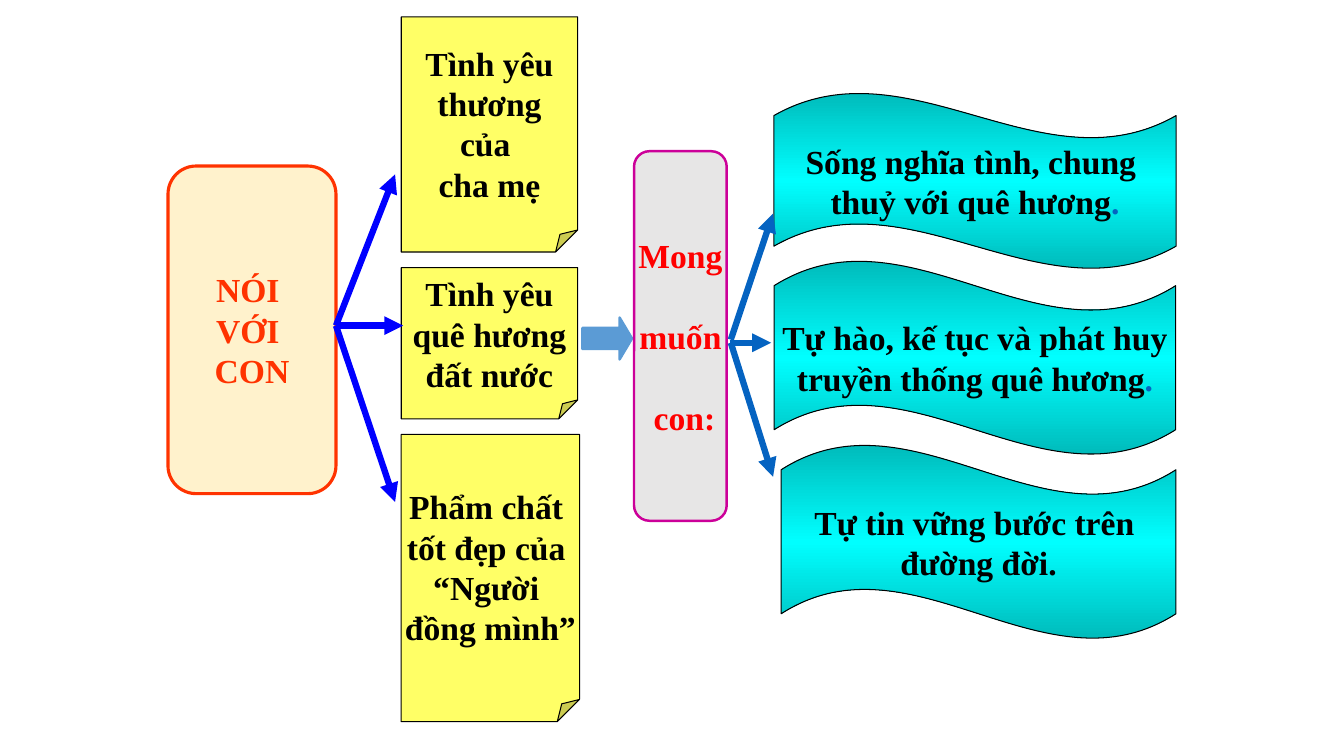
from copy import deepcopy
from dataclasses import dataclass

from lxml.etree import SubElement
from pptx import Presentation
from pptx.dml.color import RGBColor as Rgb
from pptx.enum.shapes import MSO_CONNECTOR as Connector, MSO_SHAPE as Preset
from pptx.enum.text import MSO_ANCHOR as Anchor, PP_ALIGN as Align
from pptx.oxml.ns import qn
from pptx.shapes.autoshape import Shape
from pptx.slide import Slide
from pptx.util import Pt


@dataclass(frozen=True)
class Theme:
    font: str = "Times New Roman"
    text_size: float = 24
    arrow_width: float = 4.5
    black: str = "000000"
    orange: str = "FF3300"
    cream: str = "FFF2CC"
    yellow: str = "FFFF66"
    red: str = "FF0000"
    magenta: str = "CC0099"
    grey: str = "E7E6E6"
    sky: str = "5B9BD5"
    blue: str = "0000FF"
    link_blue: str = "0563C1"
    wave_stops: tuple[str, ...] = ("00BBBB", "00FFFF", "00BBBB")


THEME = Theme()


@dataclass(frozen=True)
class Box:
    preset: Preset
    left: float
    top: float
    width: float
    height: float
    fills: tuple[str, ...]
    line: str
    line_width: float
    adjustments: tuple[float, ...]
    text: str = ""
    text_color: str = THEME.black
    line_gap: float = 0
    blue_stop: bool = False


@dataclass(frozen=True)
class Fan:
    """Arrows that leave one side of a box for several targets."""
    color: str
    arrows: tuple[tuple[float, float, float, float], ...]


def note(top: float, width: float, height: float, text: str) -> Box:
    return Box(Preset.FOLDED_CORNER, 286.6, top, width, height, (THEME.yellow,),
               THEME.black, 0.75, (0.125,), text)


def wave(left: float, top: float, width: float, height: float, text: str,
         blue_stop: bool = False) -> Box:
    return Box(Preset.WAVE, left, top, width, height, THEME.wave_stops,
               THEME.black, 0.75, (0.13, 0), text, blue_stop=blue_stop)


BOXES = (
    # Topic, block arrow and wish
    Box(Preset.ROUNDED_RECTANGLE, 120, 118.6, 120, 234, (THEME.cream,), THEME.orange,
        2.25, (0.167,), "NÓI \nVỚI \nCON", THEME.orange),
    Box(Preset.RIGHT_ARROW, 416, 226.8, 35.5, 30, (THEME.sky,), THEME.sky,
        1.75, (0.5, 0.297)),
    Box(Preset.ROUNDED_RECTANGLE, 452.9, 108, 66.2, 264, (THEME.grey,), THEME.magenta,
        1.75, (0.167,), "Mong\nmuốn\n con:", THEME.red, line_gap=28.8),
    # What the father wishes
    wave(552.8, 66.2, 287.3, 126, "Sống nghĩa tình, chung \nthuỷ với quê hương", True),
    wave(553, 186, 286.8, 139,
         "Tự hào, kế tục và phát huy\ntruyền thống quê hương", True),
    wave(558, 317.5, 282, 139, "Tự tin vững bước trên \nđường đời."),
    # What the father speaks of
    note(12, 126, 168, "Tình yêu\nthương\ncủa \ncha mẹ"),
    note(191.2, 126, 108, "Tình yêu\nquê hương\nđất nước"),
    note(310.3, 127.4, 205.2, "Phẩm chất \ntốt đẹp của \n“Người \nđồng mình”"),
)

FANS = (
    Fan(THEME.link_blue, ((521.3, 244.8, 550.8, 244.8),
                          (522, 242.6, 552.2, 152.6),
                          (522, 244.8, 552.2, 340.6))),
    Fan(THEME.blue, tuple((240, 232.6, x, y) for x, y in
                          ((288, 232.6), (282.2, 124.6), (282.2, 358.6)))),
)


def adjust(shape: Shape, values: tuple[float, ...]) -> None:
    """Write the guides directly, as not every preset lists its own."""
    geometry = shape._element.spPr.find(qn("a:prstGeom"))
    for old_guides in geometry.findall(qn("a:avLst")):
        geometry.remove(old_guides)
    guides = SubElement(geometry, qn("a:avLst"))
    for number, value in enumerate(values, start=1):
        name = "adj" if len(values) == 1 else f"adj{number}"
        SubElement(guides, qn("a:gd"), name=name, fmla=f"val {round(value * 100000)}")


def paint(shape: Shape, colors: tuple[str, ...]) -> None:
    fill = shape.fill
    if len(colors) == 1:
        fill.solid()
        fill.fore_color.rgb = Rgb.from_string(colors[0])
        return
    fill.gradient()
    fill.gradient_angle = 90
    stop_list = next(shape._element.spPr.iter(qn("a:gsLst")))
    while len(stop_list) < len(colors):
        stop_list.append(deepcopy(stop_list[0]))
    for index, (stop, color) in enumerate(zip(fill.gradient_stops, colors)):
        stop.color.rgb = Rgb.from_string(color)
        stop.position = index / (len(colors) - 1)


def write_text(shape: Shape, box: Box) -> None:
    frame = shape.text_frame
    frame.text = box.text
    frame.word_wrap = False
    frame.vertical_anchor = Anchor.MIDDLE
    if box.blue_stop:
        frame.paragraphs[-1].add_run().text = "."
    for index, para in enumerate(frame.paragraphs):
        para.alignment = Align.CENTER
        para.space_before = Pt(box.line_gap if index else 0)
        for span in para.runs:
            span.font.name = THEME.font
            span.font.size = Pt(THEME.text_size)
            span.font.bold = True
            span.font.color.rgb = Rgb.from_string(box.text_color)
    if box.blue_stop:
        span.font.color.rgb = Rgb.from_string(THEME.link_blue)


def draw_box(page: Slide, box: Box) -> None:
    shape = page.shapes.add_shape(box.preset, Pt(box.left), Pt(box.top),
                                  Pt(box.width), Pt(box.height))
    shape.shadow.inherit = False
    adjust(shape, box.adjustments)
    paint(shape, box.fills)
    shape.line.color.rgb = Rgb.from_string(box.line)
    shape.line.width = Pt(box.line_width)
    if box.text:
        write_text(shape, box)


def draw_fan(page: Slide, fan: Fan) -> None:
    for ends in fan.arrows:
        arrow = page.shapes.add_connector(Connector.STRAIGHT, *map(Pt, ends))
        arrow.line.color.rgb = Rgb.from_string(fan.color)
        arrow.line.width = Pt(THEME.arrow_width)
        SubElement(arrow.line._get_or_add_ln(), qn("a:tailEnd"), type="triangle")
        SubElement(arrow._element.spPr, qn("a:effectLst"))


def main() -> None:
    deck = Presentation()
    deck.slide_width, deck.slide_height = Pt(960), Pt(540)
    page = deck.slides.add_slide(deck.slide_layouts[6])
    for box in BOXES:
        draw_box(page, box)
    for fan in FANS:
        draw_fan(page, fan)
    deck.save("out.pptx")


if __name__ == "__main__":
    main()
